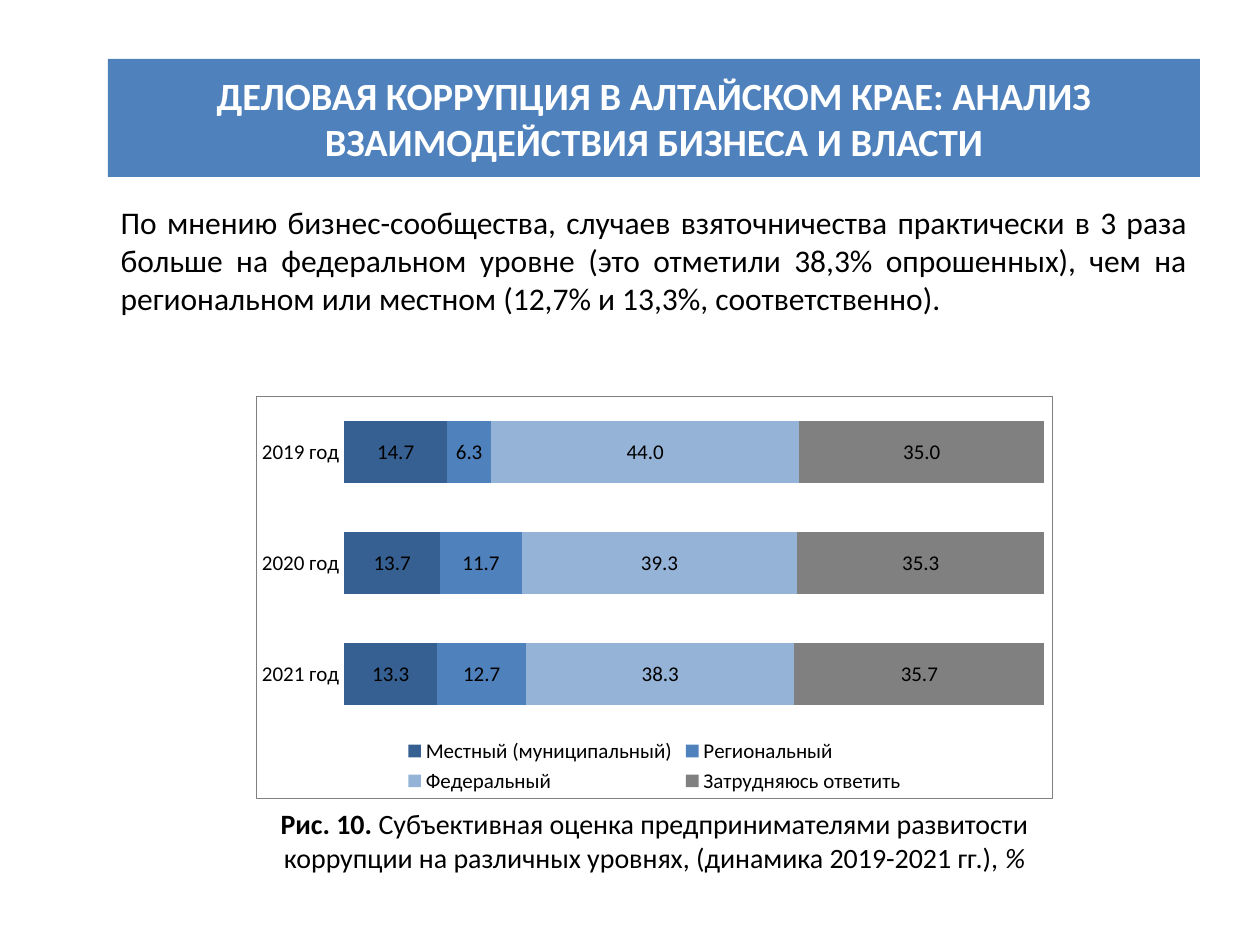
"""Build the slide on business corruption in Altai Krai with its stacked bar chart."""
from lxml import etree
from pptx import Presentation
from pptx import util as u
from pptx.chart.data import CategoryChartData
from pptx.dml.color import RGBColor
from pptx.enum import chart as ch, text
from pptx.oxml import parse_xml
from pptx.oxml.ns import nsdecls, qn

PX = 914400 / 126
COLORS = {"text": "000000", "paper": "FFFFFF", "banner": "4F81BD", "border": "808080",
          "local": "376092", "regional": "4F81BD", "federal": "95B3D7", "unsure": "808080"}


def scaled(*lengths):
    return [u.Emu(round(length * PX)) for length in lengths]


def style(font, size, color="text", **extra):
    font.color.rgb = RGBColor.from_string(COLORS[color])
    for key, value in {"name": "Calibri", "size": u.Pt(size), **extra}.items():
        setattr(font, key, value)


deck = Presentation()
deck.slide_width, deck.slide_height = scaled(1260, 945)
slide = deck.slides.add_slide(deck.slide_layouts[1])

heading = slide.shapes.title
opinion = slide.placeholders[1]
caption = slide.shapes.add_textbox(*scaled(256, 800, 797, 81))
for block, box, anchor, align in [
    (heading, (108, 59, 1092, 118), "MIDDLE", "CENTER"),
    (opinion, (108, 197, 1092, 199), "TOP", "JUSTIFY"),
    (caption, (256, 800, 797, 81), "MIDDLE", "CENTER"),
]:
    block.left, block.top, block.width, block.height = scaled(*box)
    frame = block.text_frame
    frame.word_wrap = True
    frame.auto_size = text.MSO_AUTO_SIZE.NONE
    frame.vertical_anchor = text.MSO_ANCHOR[anchor]
    frame.paragraphs[0].alignment = text.PP_ALIGN[align]
    frame.paragraphs[0].space_before = u.Pt(0)

heading.fill.solid()
heading.fill.fore_color.rgb = RGBColor.from_string(COLORS["banner"])
title_run = heading.text_frame.paragraphs[0].add_run()
title_run.text = "ДЕЛОВАЯ КОРРУПЦИЯ В АЛТАЙСКОМ КРАЕ: АНАЛИЗ ВЗАИМОДЕЙСТВИЯ БИЗНЕСА И ВЛАСТИ"
style(title_run.font, 22, "paper", bold=True)

opinion_line = opinion.text_frame.paragraphs[0]
indents = opinion_line._p.get_or_add_pPr()
indents.set("marL", "0")
indents.set("indent", "0")
etree.SubElement(indents, qn("a:buNone"))
opinion_run = opinion_line.add_run()
opinion_run.text = (
    "По мнению бизнес-сообщества, случаев взяточничества практически в 3 раза больше "
    "на федеральном уровне (это отметили 38,3% опрошенных), чем на региональном "
    "или местном (12,7% и 13,3%, соответственно).")
style(opinion_run.font, 18)

for words, emphasis in [
    ("Рис. 10. ", {"bold": True}),
    ("Субъективная оценка предпринимателями развитости коррупции на различных уровнях, "
     "(динамика 2019-2021 гг.), ", {}),
    ("%", {"italic": True}),
]:
    caption_run = caption.text_frame.paragraphs[0].add_run()
    caption_run.text = words
    style(caption_run.font, 16, **emphasis)

levels = [
    ("Местный (муниципальный)", "local", (13.3, 13.7, 14.7)),
    ("Региональный", "regional", (12.7, 11.7, 6.3)),
    ("Федеральный", "federal", (38.3, 39.3, 44)),
    ("Затрудняюсь ответить", "unsure", (35.7, 35.3, 35)),
]
survey = CategoryChartData(number_format="0.0")
survey.categories = ["2021 год", "2020 год", "2019 год"]
for level, _, shares in levels:
    survey.add_series(level, shares)

chart = slide.shapes.add_chart(
    ch.XL_CHART_TYPE.BAR_STACKED_100, *scaled(256, 396, 797, 403), survey).chart
style(chart.font, 12)
chart.has_title = False
chart.has_legend = True
chart.legend.position = ch.XL_LEGEND_POSITION.BOTTOM
chart.legend.include_in_layout = False
style(chart.legend.font, 12)

years = chart.category_axis
years.major_tick_mark = ch.XL_TICK_MARK.NONE
years.format.line.fill.background()
style(years.tick_labels.font, 12)
chart.value_axis.visible = False
chart.value_axis.has_major_gridlines = False

bars = chart.plots[0]
bars.gap_width, bars.overlap, bars.vary_by_categories = 80, 100, False
for series, (_, color, _) in zip(bars.series, levels):
    series.format.fill.solid()
    series.format.fill.fore_color.rgb = RGBColor.from_string(COLORS[color])
    labels = series.data_labels
    for key, value in {"show_value": True, "number_format": "0.0",
                       "number_format_is_linked": False}.items():
        setattr(labels, key, value)
    style(labels.font, 12)

plot_area = chart._chartSpace.find(".//" + qn("c:plotArea"))
for automatic in plot_area.findall(qn("c:layout")):
    plot_area.remove(automatic)
layout = etree.Element(qn("c:layout"))
manual = etree.SubElement(layout, qn("c:manualLayout"))
for tag, value in [("layoutTarget", "inner"), ("xMode", "edge"), ("yMode", "edge"),
                   ("x", "0.11"), ("y", "0"), ("w", "0.88"), ("h", "0.83")]:
    etree.SubElement(manual, qn("c:" + tag)).set("val", value)
plot_area.insert(0, layout)

chart._chartSpace.find(qn("c:chart")).addnext(parse_xml(
    f'<c:spPr {nsdecls("c", "a")}>'
    f'<a:solidFill><a:srgbClr val="{COLORS["paper"]}"/></a:solidFill>'
    f'<a:ln w="{u.Pt(0.75)}"><a:solidFill><a:srgbClr val="{COLORS["border"]}"/></a:solidFill></a:ln>'
    '</c:spPr>'))

deck.save("out.pptx")
